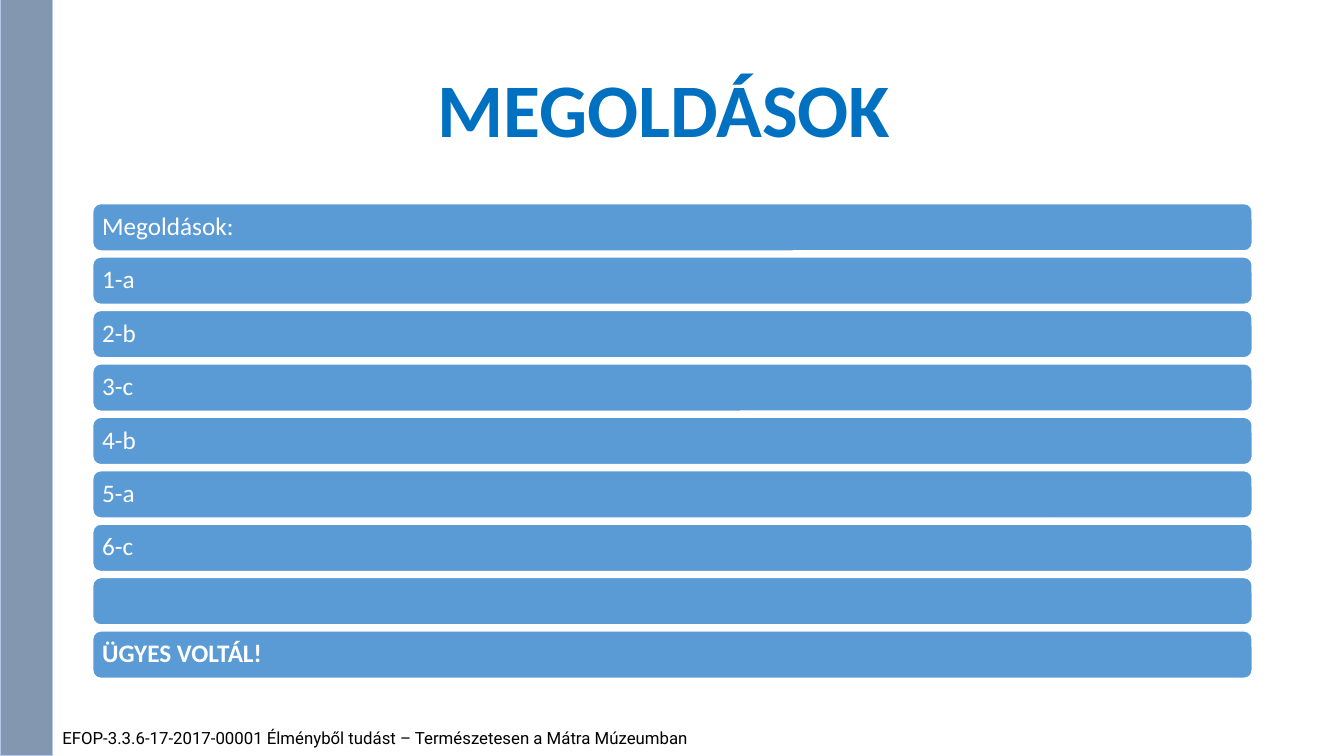
import pptx
import pptx.util
import pptx.dml.color
import pptx.enum.shapes
import pptx.enum.text

PX = 9144
COLORS = {
    "title": "0070C0",
    "bar": "5B9BD5",
    "white": "FFFFFF",
    "side": "8497B0",
    "side_line": "B4C7E7",
    "footer": "000000",
}
ANSWERS = ["Megoldások:", "1-a", "2-b", "3-c", "4-b", "5-a", "6-c", "", "ÜGYES VOLTÁL!"]
LEFT, WIDTH = 92, 1150
BAR_TOP, BAR_HEIGHT, BAR_STEP = 202, 47, 53


def px(*lengths):
    return [pptx.util.Emu(n * PX) for n in lengths]


def rgb(name):
    return pptx.dml.color.RGBColor.from_string(COLORS[name])


def format_text(tf, size, color, font="Calibri", bold=False, spacing=None, align="LEFT"):
    for p in tf.paragraphs:
        p.alignment = pptx.enum.text.PP_ALIGN[align]
        p.line_spacing = spacing
        for r in p.runs:
            r.font.name = font
            r.font.size = pptx.util.Pt(size)
            r.font.bold = bold
            r.font.color.rgb = rgb(color)


def add_title(slide, text):
    sp = slide.shapes.title
    sp.left, sp.top, sp.width, sp.height = px(LEFT, 40, WIDTH, 145)
    tf = sp.text_frame
    tf.text = text
    tf.vertical_anchor = pptx.enum.text.MSO_ANCHOR.MIDDLE
    format_text(tf, 54, "title", bold=True, spacing=0.9, align="CENTER")


def add_box(slide, kind, box, fill, line, weight):
    sp = slide.shapes.add_shape(pptx.enum.shapes.MSO_SHAPE[kind], *px(*box))
    sp.shadow.inherit = False
    sp.fill.solid()
    sp.fill.fore_color.rgb = rgb(fill)
    sp.line.color.rgb = rgb(line)
    sp.line.width = pptx.util.Pt(weight)
    return sp


def add_answer_bar(slide, row, text):
    top = BAR_TOP + row * BAR_STEP
    sp = add_box(slide, "ROUNDED_RECTANGLE", (LEFT, top, WIDTH, BAR_HEIGHT), "bar", "white", 1)
    if not text:
        return
    tf = sp.text_frame
    tf.margin_left, tf.margin_right = px(7, 7)
    tf.margin_top, tf.margin_bottom = px(7, 7)
    tf.vertical_anchor = pptx.enum.text.MSO_ANCHOR.MIDDLE
    tf.text = text
    format_text(tf, 18, "white", bold=row == len(ANSWERS) - 1, spacing=0.9)


def add_footer(slide, text):
    sp = slide.shapes.add_textbox(*px(52, 717, 830, 61))
    tf = sp.text_frame
    tf.word_wrap = True
    tf.text = text
    format_text(tf, 12, "footer", font="Roboto")


def main():
    prs = pptx.Presentation()
    prs.slide_width, prs.slide_height = px(1333, 750)
    slide = prs.slides.add_slide(prs.slide_layouts[5])
    add_title(slide, "MEGOLDÁSOK ")
    for row, text in enumerate(ANSWERS):
        add_answer_bar(slide, row, text)
    add_box(slide, "RECTANGLE", (0, 0, 52, 750), "side", "side_line", 0.75)
    add_footer(slide, "EFOP-3.3.6-17-2017-00001 Élményből tudást – Természetesen a Mátra Múzeumban")
    prs.save("out.pptx")


if __name__ == "__main__":
    main()
